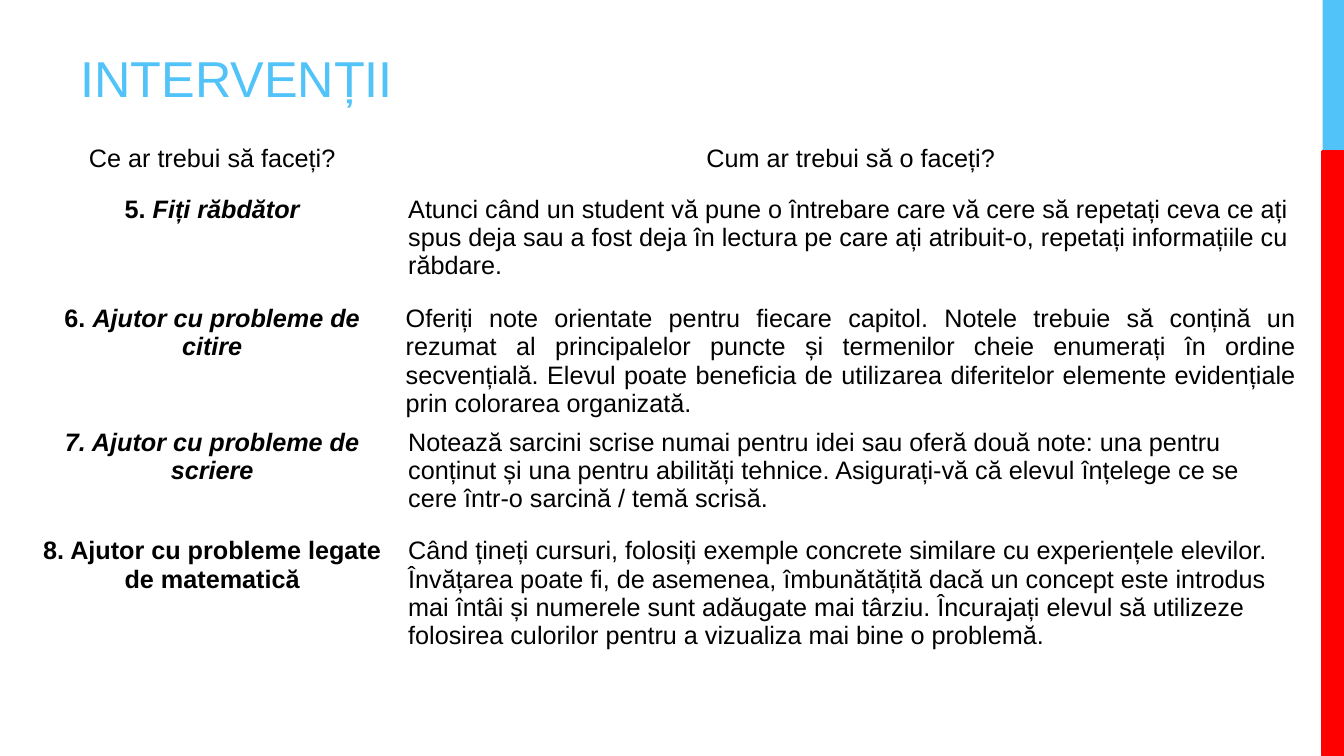
from pptx import Presentation
from pptx.dml.color import RGBColor
from pptx.enum.shapes import MSO_SHAPE as Shape
from pptx.enum.text import MSO_ANCHOR as Anchor, PP_ALIGN as Align
from pptx.util import Pt

COLORS = {"sky": "51C3F9", "red": "FF0000", "text": "000000"}
TITLE = "INTERVENȚII"
HEADINGS = ("Ce ar trebui să faceți?", "Cum ar trebui să o faceți?")
BOLD, BOLD_ITALIC = {"bold": True}, {"bold": True, "italic": True}
INTERVENTIONS = [
    ([("5. ", BOLD), ("Fiți răbdător", BOLD_ITALIC)],
     "Atunci când un student vă pune o întrebare care vă cere să repetați ceva ce ați spus deja sau a fost deja "
     "în lectura pe care ați atribuit-o, repetați informațiile cu răbdare."),
    ([("6. ", BOLD), ("Ajutor cu probleme de citire", BOLD_ITALIC)],
     "Oferiți note orientate pentru fiecare capitol. Notele trebuie să conțină un rezumat al principalelor puncte "
     "și termenilor cheie enumerați în ordine secvențială. Elevul poate beneficia de utilizarea diferitelor "
     "elemente evidențiale prin colorarea organizată."),
    ([("7. Ajutor cu probleme de scriere", BOLD_ITALIC)],
     "Notează sarcini scrise numai pentru idei sau oferă două note: una pentru conținut și una pentru abilități "
     "tehnice. Asigurați-vă că elevul înțelege ce se cere într-o sarcină / temă scrisă."),
    ([("8. Ajutor cu probleme legate de matematică", BOLD)],
     "Când țineți cursuri, folosiți exemple concrete similare cu experiențele elevilor. Învățarea poate fi, de "
     "asemenea, îmbunătățită dacă un concept este introdus mai întâi și numerele sunt adăugate mai târziu. "
     "Încurajați elevul să utilizeze folosirea culorilor pentru a vizualiza mai bine o problemă."),
]
JUSTIFIED_ROW = 2
WIDTH, HEIGHT = 960, 540
BAR_LEFT, BAR_SPLIT = 944.8, 108
COLUMN_WIDTHS = (265.7, 646.5)
ROW_HEIGHTS = (36, 77.7, 88.6, 77.7, 100)
TABLE_LEFT, TABLE_TOP = 18.7, 100
MARGINS = {"margin_left": 7.2, "margin_right": 7.2, "margin_top": 3.6, "margin_bottom": 3.6}
TIGHT_MARGINS = {"margin_left": 5.4, "margin_right": 5.4, "margin_top": 0, "margin_bottom": 0}


def color(name):
    return RGBColor.from_string(COLORS[name])


def set_margins(target, margins):
    for side, value in margins.items():
        setattr(target, side, Pt(value))


def write(frame, spans, align=Align.LEFT, size=18, color_name="text"):
    frame.word_wrap = True
    para = frame.paragraphs[0]
    para.alignment = align
    for text, style in spans:
        span = para.add_run()
        span.text = text
        for name, value in {"name": "Arial", "size": Pt(size), "bold": False, "italic": False, **style}.items():
            setattr(span.font, name, value)
        span.font.color.rgb = color(color_name)


def add_bar(page, top, bottom, color_name):
    bar = page.shapes.add_shape(Shape.RECTANGLE, Pt(BAR_LEFT), Pt(top), Pt(WIDTH - BAR_LEFT), Pt(bottom - top))
    bar.shadow.inherit = False
    bar.fill.solid()
    bar.fill.fore_color.rgb = color(color_name)
    bar.line.fill.background()
    return bar


def add_title(page):
    box = page.shapes.add_textbox(Pt(50.4), Pt(15.1), Pt(607.7), Pt(65.5))
    box.text_frame.vertical_anchor = Anchor.BOTTOM
    set_margins(box.text_frame, MARGINS)
    write(box.text_frame, [(TITLE, {})], size=36, color_name="sky")


def add_interventions(page):
    table = page.shapes.add_table(
        len(ROW_HEIGHTS), len(COLUMN_WIDTHS), Pt(TABLE_LEFT), Pt(TABLE_TOP),
        Pt(sum(COLUMN_WIDTHS)), Pt(sum(ROW_HEIGHTS))).table
    table.first_row = table.horz_banding = False
    for column, width in zip(table.columns, COLUMN_WIDTHS):
        column.width = Pt(width)
    for row, height in zip(table.rows, ROW_HEIGHTS):
        row.height = Pt(height)
    rows = [[[(heading, {})] for heading in HEADINGS]]
    rows += [[action, [(method, {})]] for action, method in INTERVENTIONS]
    for row_index, row in enumerate(rows):
        for column_index, spans in enumerate(row):
            cell = table.cell(row_index, column_index)
            cell.fill.background()
            justified = (row_index, column_index) == (JUSTIFIED_ROW, 1)
            centered = row_index == 0 or column_index == 0
            set_margins(cell, TIGHT_MARGINS if justified else MARGINS)
            cell.vertical_anchor = Anchor.MIDDLE if justified else Anchor.TOP
            align = Align.JUSTIFY if justified else Align.CENTER if centered else Align.LEFT
            write(cell.text_frame, spans, align)


def main():
    deck = Presentation()
    deck.slide_width, deck.slide_height = Pt(WIDTH), Pt(HEIGHT)
    page = deck.slides.add_slide(deck.slide_layouts[6])
    add_bar(page, 0, BAR_SPLIT, "sky")
    red_bar = add_bar(page, BAR_SPLIT, HEIGHT, "red")
    red_bar.line.color.rgb = color("red")
    red_bar.line.width = Pt(2.25)
    add_title(page)
    add_interventions(page)
    deck.save("out.pptx")


if __name__ == "__main__":
    main()
